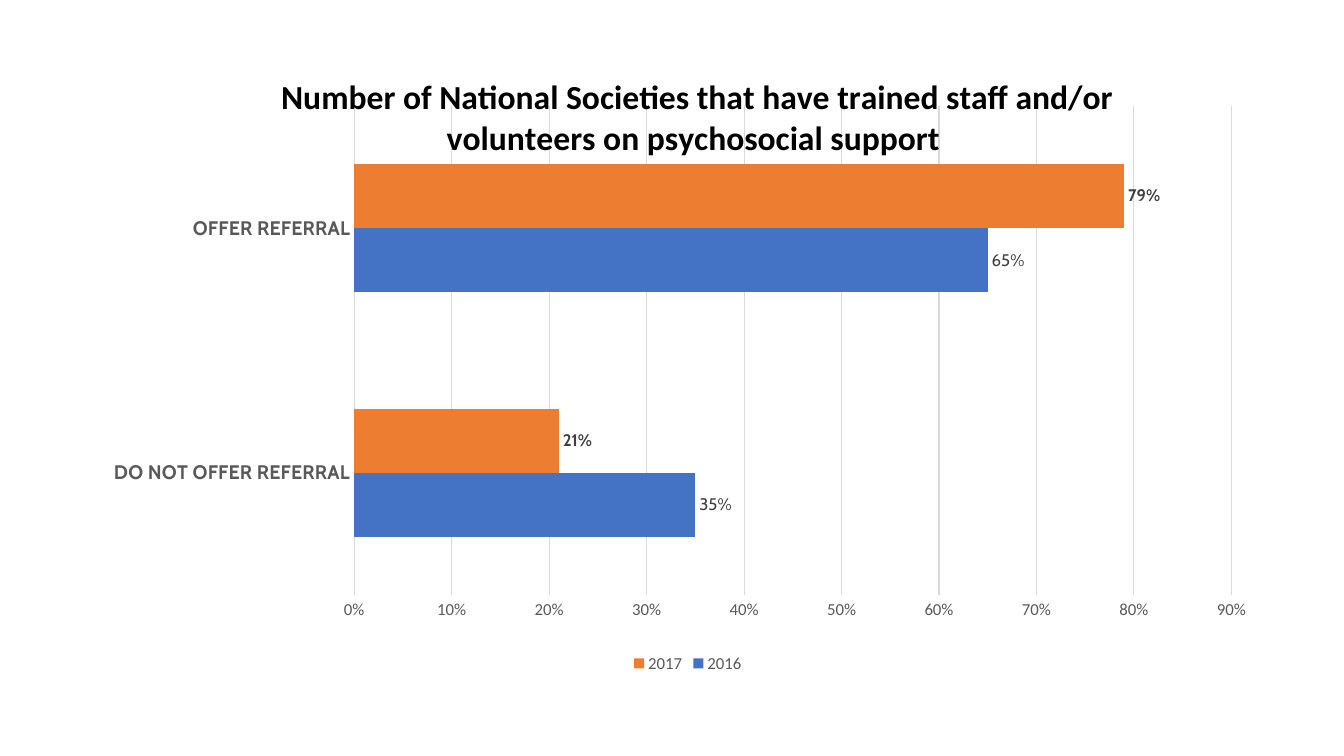
from pptx import Presentation
from pptx.chart.data import CategoryChartData
from pptx.dml.color import RGBColor
from pptx.enum.chart import XL_CHART_TYPE as ChartType
from pptx.enum.chart import XL_LABEL_POSITION as LabelPosition
from pptx.enum.chart import XL_LEGEND_POSITION as LegendPosition
from pptx.enum.chart import XL_TICK_MARK as TickMark
from pptx.oxml import parse_xml
from pptx.oxml.ns import nsdecls
from pptx.util import Pt

PX = 9144  # 100 px to the inch
GREY, PALE = "595959", "D9D9D9"
TITLE = ("Number of National Societies that have trained staff and/or "
         "volunteers on psychosocial support ")
CATEGORIES = ["DO NOT OFFER REFERRAL", "OFFER REFERRAL"]
# year, values, bar colour, bold labels
YEARS = [("2016", (0.35, 0.65), "4472C4", False),
         ("2017", (0.21, 0.79), "ED7D31", True)]


def color(value):
    return RGBColor.from_string(value)


def style_font(font, size, hue=GREY, name="Calibri", bold=False):
    font.size, font.name, font.bold = Pt(size), name, bold
    font.color.rgb = color(hue)


def style_line(line, hue=PALE):
    line.color.rgb = color(hue)
    line.width = Pt(0.75)


def manual_layout(x, y, w=None, h=None):
    """Layout element in fractions of the chart; a size makes it an inner plot."""
    parts = [("layoutTarget", "inner")] if w else []
    parts += [("xMode", "edge"), ("yMode", "edge"), ("x", x), ("y", y)]
    parts += [("w", w), ("h", h)] if w else []
    body = "".join(f'<c:{tag} val="{value}"/>' for tag, value in parts)
    return parse_xml(f"<c:layout {nsdecls('c')}><c:manualLayout>{body}"
                     "</c:manualLayout></c:layout>")


def add_title(chart):
    frame = chart.chart_title.text_frame
    span = frame.paragraphs[0].add_run()
    span.text = TITLE
    style_font(span.font, 24, "000000", bold=True)
    title = chart.chart_title._element
    for old in title.findall("{*}layout"):
        title.remove(old)
    title.find("{*}tx").addnext(manual_layout(0.14, 0.04))
    chart.chart_title.include_in_layout = True


def style_axes(chart):
    categories, values = chart.category_axis, chart.value_axis
    for axis in (categories, values):
        axis.major_tick_mark = axis.minor_tick_mark = TickMark.NONE
    style_font(categories.tick_labels.font, 14, name="Cabin", bold=True)
    style_line(categories.format.line)
    categories.has_major_gridlines = False

    style_font(values.tick_labels.font, 12)
    values.tick_labels.number_format = "0%"
    values.tick_labels.number_format_is_linked = False
    values.minimum_scale, values.maximum_scale, values.major_unit = 0, 0.9, 0.1
    values.format.line.fill.background()
    values.has_major_gridlines = True
    style_line(values.major_gridlines.format.line)


def style_bars(plot):
    plot.gap_width, plot.overlap, plot.vary_by_categories = 182, 0, False
    for series, (_, _, hue, bold) in zip(plot.series, YEARS):
        series.format.fill.solid()
        series.format.fill.fore_color.rgb = color(hue)
        series.invert_if_negative = False
        labels = series.data_labels
        labels.show_value = True
        labels.number_format, labels.number_format_is_linked = "0%", False
        labels.position = LabelPosition.OUTSIDE_END
        style_font(labels.font, 12, "404040", "Cabin", bold)


def add_referral_chart(page, left, top, width, height):
    data = CategoryChartData(number_format="0%")
    data.categories = CATEGORIES
    for year, values, _, _ in YEARS:
        data.add_series(year, values)
    box = [length * PX for length in (left, top, width, height)]
    chart = page.shapes.add_chart(ChartType.BAR_CLUSTERED, *box, data).chart
    style_font(chart.font, 10, "000000")
    add_title(chart)
    style_axes(chart)
    style_bars(chart.plots[0])

    # Plot area
    area = chart._chartSpace.chart.plotArea
    for old in area.findall("{*}layout"):
        area.remove(old)
    area.insert(0, manual_layout(0.209, 0.1, 0.765, 0.771))

    # Legend
    chart.has_legend = True
    chart.legend.position = LegendPosition.BOTTOM
    chart.legend.include_in_layout = False
    style_font(chart.legend.font, 12)


def main():
    deck = Presentation()
    deck.slide_width, deck.slide_height = 1333 * PX, 750 * PX
    page = deck.slides.add_slide(deck.slide_layouts[6])
    add_referral_chart(page, 113, 42, 1138, 630)
    deck.save("out.pptx")


if __name__ == "__main__":
    main()
